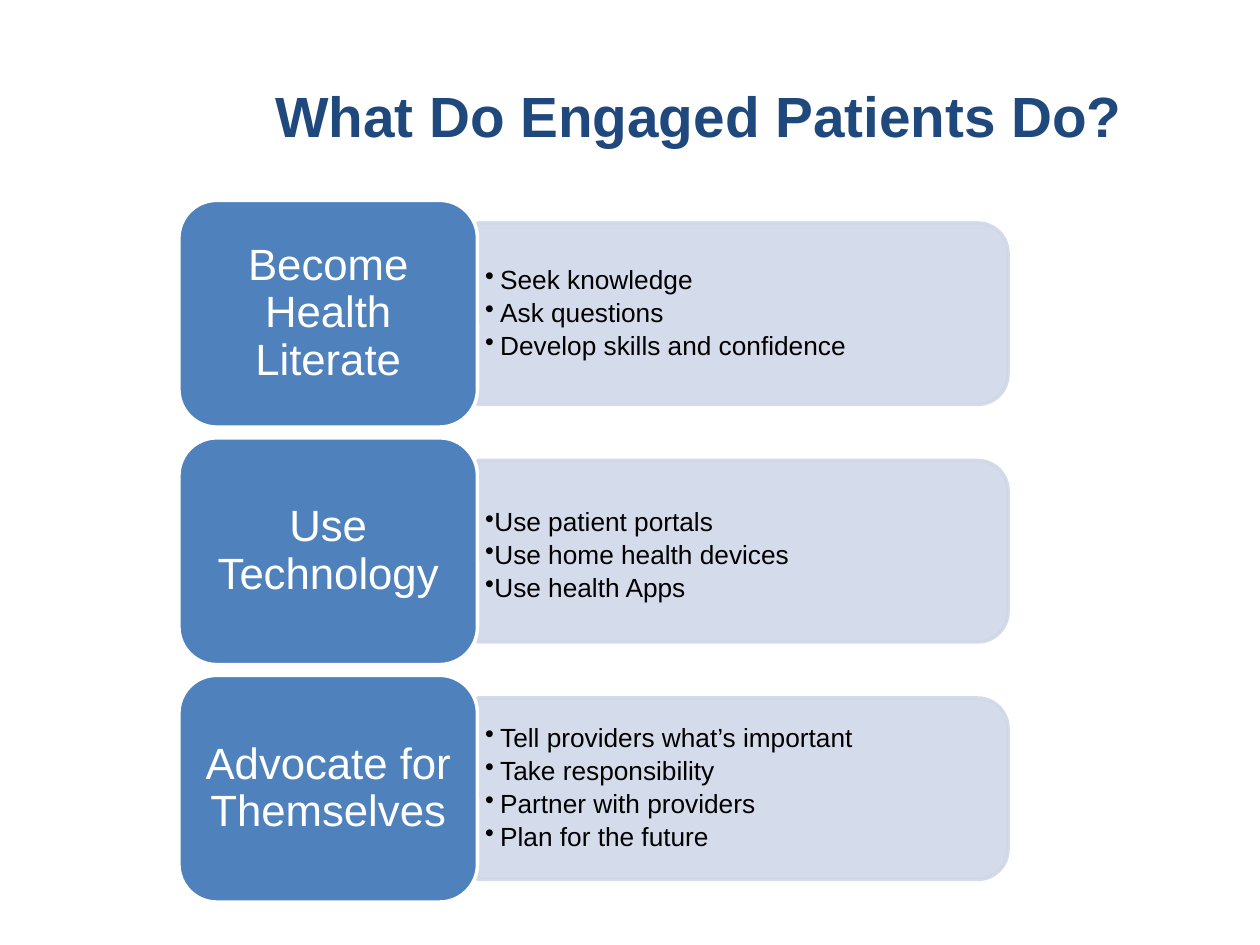
from lxml.etree import SubElement
from pptx import Presentation
from pptx.dml.color import RGBColor
from pptx.enum.shapes import MSO_SHAPE
from pptx.enum.text import MSO_ANCHOR, PP_ALIGN
from pptx.oxml.ns import qn
from pptx.util import Inches, Pt

COLORS = {"title": "1F497D", "card": "4F81BD", "panel": "D0D8E8", "white": "FFFFFF", "text": "000000"}
TITLE_FORMAT = {"name": "Arial", "size": Pt(32.4), "bold": True}
CARD_FORMAT = {"name": "Arial", "size": Pt(25), "bold": False}
BULLET_FORMAT = {"name": "Arial", "size": Pt(15), "bold": False}
CARD_WIDTH, PANEL_WIDTH = 2.37, 4.21
CARD_HEIGHT, PANEL_HEIGHT, ROW_PITCH = 1.8, 1.44, 1.885
ROWS = [
    {"heading": "Become Health Literate", "hanging": 0.12, "top_inset": 0.03,
     "bullets": ["Seek knowledge", "Ask questions", "Develop skills and confidence"]},
    {"heading": "Use Technology", "hanging": 0, "top_inset": 0.11,
     "bullets": ["Use patient portals", "Use home health devices", "Use health Apps"]},
    {"heading": "Advocate for Themselves", "hanging": 0.12, "top_inset": 0.03,
     "bullets": ["Tell providers what’s important", "Take responsibility",
                 "Partner with providers", "Plan for the future"]},
]


def set_attributes(target, values):
    """Set each named value on the target object."""
    for name, value in values.items():
        setattr(target, name, value)


def format_font(paragraph, values, color):
    """Apply the font values and a named colour to a paragraph."""
    set_attributes(paragraph.font, values)
    paragraph.font.color.rgb = RGBColor.from_string(COLORS[color])


def prepare_frame(shape, left, top, right, bottom):
    """Set wrapping, middle anchoring and insets, and return the text frame."""
    frame = shape.text_frame
    set_attributes(frame, {
        "word_wrap": True, "vertical_anchor": MSO_ANCHOR.MIDDLE,
        "margin_left": Inches(left), "margin_top": Inches(top),
        "margin_right": Inches(right), "margin_bottom": Inches(bottom)})
    return frame


def add_block(slide, kind, box, fill, line):
    """Add a preset shape with a plain fill and a two-point outline."""
    shape = slide.shapes.add_shape(kind, *map(Inches, box))
    shape.shadow.inherit = False
    shape.fill.solid()
    shape.fill.fore_color.rgb = RGBColor.from_string(COLORS[fill])
    shape.line.color.rgb = RGBColor.from_string(COLORS[line])
    shape.line.width = Pt(2)
    return shape


def add_title(slide, left, top, width, height):
    """Add the centred slide title."""
    shape = slide.shapes.add_textbox(*map(Inches, (left, top, width, height)))
    paragraph = prepare_frame(shape, 0.1, 0.05, 0.1, 0.05).paragraphs[0]
    paragraph.text = "What Do Engaged Patients Do?"
    paragraph.alignment = PP_ALIGN.CENTER
    format_font(paragraph, TITLE_FORMAT, "title")


def add_panel(slide, left, top, width, height):
    """Add the translucent panel whose right corners are rounded."""
    box = (left + (width - height) / 2, top + (height - width) / 2, height, width)
    panel = add_block(slide, MSO_SHAPE.ROUND_2_SAME_RECTANGLE, box, "panel", "panel")
    panel.rotation = 90
    for color in panel._element.spPr.iter(qn("a:srgbClr")):
        SubElement(color, qn("a:alpha"), val="90000")


def add_bullets(slide, left, top, width, height, row):
    """Add the bulleted actions of one row."""
    shape = slide.shapes.add_textbox(*map(Inches, (left, top, width, height)))
    frame = prepare_frame(shape, 0.06, row["top_inset"], 0.06, 0.03)
    for index, text in enumerate(row["bullets"]):
        paragraph = frame.add_paragraph() if index else frame.paragraphs[0]
        paragraph.text = text
        properties = paragraph._p.get_or_add_pPr()
        properties.set("marL", str(Inches(row["hanging"])))
        properties.set("indent", str(-Inches(row["hanging"])))
        SubElement(properties, qn("a:buChar"), char="•")
        set_attributes(paragraph, {"line_spacing": 0.9, "space_after": Pt(2.6)})
        format_font(paragraph, BULLET_FORMAT, "text")


def add_card(slide, left, top, width, height, heading):
    """Add the rounded heading card of one row."""
    card = add_block(slide, MSO_SHAPE.ROUNDED_RECTANGLE, (left, top, width, height), "card", "white")
    paragraph = prepare_frame(card, 0.1, 0.05, 0.1, 0.05).paragraphs[0]
    paragraph.text = heading
    set_attributes(paragraph, {"alignment": PP_ALIGN.CENTER, "line_spacing": 0.9})
    format_font(paragraph, CARD_FORMAT, "white")


def add_row(slide, left, top, row):
    """Add one heading card with its panel of actions."""
    panel_left = left + CARD_WIDTH
    panel_top = top + (CARD_HEIGHT - PANEL_HEIGHT) / 2
    add_panel(slide, panel_left, panel_top, PANEL_WIDTH, PANEL_HEIGHT)
    add_bullets(slide, panel_left, panel_top + 0.07, PANEL_WIDTH - 0.07, PANEL_HEIGHT - 0.14, row)
    add_card(slide, left, top, CARD_WIDTH, CARD_HEIGHT, row["heading"])


def main():
    """Build and save the presentation."""
    presentation = Presentation()
    presentation.slide_width, presentation.slide_height = Inches(10), Inches(7.5)
    slide = presentation.slides.add_slide(presentation.slide_layouts[6])
    add_title(slide, 1.92, 0.57, 7.25, 0.68)
    for index, row in enumerate(ROWS):
        add_row(slide, 1.42, 1.59 + index * ROW_PITCH, row)
    presentation.save("out.pptx")


if __name__ == "__main__":
    main()
